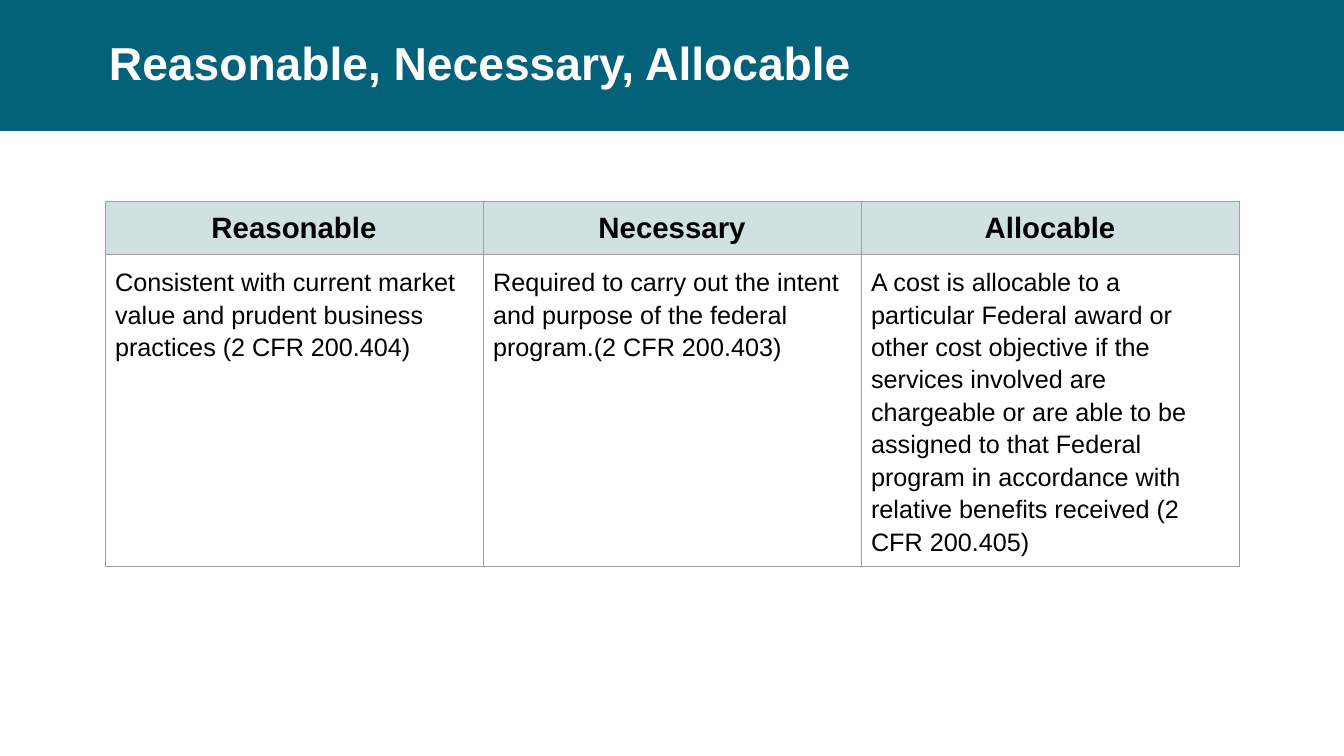
from lxml.etree import SubElement
from pptx import Presentation
from pptx.dml.color import RGBColor
from pptx.enum.shapes import MSO_SHAPE
from pptx.enum.text import MSO_ANCHOR, MSO_AUTO_SIZE, PP_ALIGN
from pptx.oxml.ns import qn
from pptx.util import Pt

TEAL = RGBColor(0x03, 0x61, 0x7A)
PALE = RGBColor(0xD0, 0xE0, 0xE3)
GRAY = RGBColor(0x9E, 0x9E, 0x9E)
WHITE = RGBColor(0xFF, 0xFF, 0xFF)
BLACK = RGBColor(0, 0, 0)

WIDTH, HEIGHT = 960, 540
BAND = 93.6
PAD = 7.2

TERMS = [
    ("Reasonable",
     "Consistent with current market value and prudent business practices "
     "(2 CFR 200.404)"),
    ("Necessary",
     "Required to carry out the intent and purpose of the federal "
     "program.(2 CFR 200.403)"),
    ("Allocable",
     "A cost is allocable to a particular Federal award or other cost "
     "objective if the services involved are chargeable or are able to be "
     "assigned to that Federal program in accordance with relative benefits "
     "received (2 CFR 200.405)"),
]


def write(frame, text, size, color, bold, align, spacing):
    frame.text = text
    para = frame.paragraphs[0]
    para.alignment = align
    para.line_spacing = spacing
    font = para.runs[0].font
    font.name = "Arial"
    font.size = Pt(size)
    font.bold = bold
    font.color.rgb = color


def add_band(slide):
    band = slide.shapes.add_shape(
        MSO_SHAPE.RECTANGLE, 0, 0, Pt(WIDTH), Pt(BAND))
    band.shadow.inherit = False
    band.fill.solid()
    band.fill.fore_color.rgb = TEAL
    band.line.fill.background()
    return band


def set_title(slide, text):
    title = slide.shapes.title
    title.left, title.top = Pt(70.6), Pt(0)
    title.width, title.height = Pt(828), Pt(BAND)
    frame = title.text_frame
    frame.word_wrap = True
    frame.auto_size = MSO_AUTO_SIZE.NONE
    frame.vertical_anchor = MSO_ANCHOR.MIDDLE
    write(frame, text, 33, WHITE, True, PP_ALIGN.LEFT, 0.9)
    return title


def add_edges(cell):
    props = cell._tc.get_or_add_tcPr()
    # Borders come before the fill in the cell properties
    for place, side in enumerate(("lnL", "lnR", "lnT", "lnB")):
        line = SubElement(props, qn(f"a:{side}"), w=str(Pt(0.75)))
        fill = SubElement(line, qn("a:solidFill"))
        SubElement(fill, qn("a:srgbClr"), val=str(GRAY))
        props.insert(place, line)


def fill_cell(cell, text, head):
    cell.margin_left = cell.margin_right = Pt(PAD)
    cell.margin_top = cell.margin_bottom = Pt(PAD)
    cell.vertical_anchor = MSO_ANCHOR.TOP
    if head:
        cell.fill.solid()
        cell.fill.fore_color.rgb = PALE
        write(cell.text_frame, text, 21, BLACK, True, PP_ALIGN.CENTER, 1.0)
    else:
        cell.fill.background()
        write(cell.text_frame, text, 18, BLACK, False, PP_ALIGN.LEFT, 1.15)
    add_edges(cell)


def add_terms(slide, terms):
    heights = (37.5, 223)
    table = slide.shapes.add_table(
        len(heights), len(terms), Pt(75), Pt(144),
        Pt(810), Pt(sum(heights))).table
    table.first_row = table.horz_banding = False
    for row, height in zip(table.rows, heights):
        row.height = Pt(height)
    for col, term in enumerate(terms):
        table.columns[col].width = Pt(810 / len(terms))
        for row, text in enumerate(term):
            fill_cell(table.cell(row, col), text, row == 0)


def main():
    deck = Presentation()
    deck.slide_width, deck.slide_height = Pt(WIDTH), Pt(HEIGHT)
    slide = deck.slides.add_slide(deck.slide_layouts[5])

    # Header band with the title in front of it
    band = add_band(slide)
    title = set_title(slide, "Reasonable, Necessary, Allocable")
    band._element.addnext(title._element)

    # Table of terms
    add_terms(slide, TERMS)
    deck.save("out.pptx")


if __name__ == "__main__":
    main()
